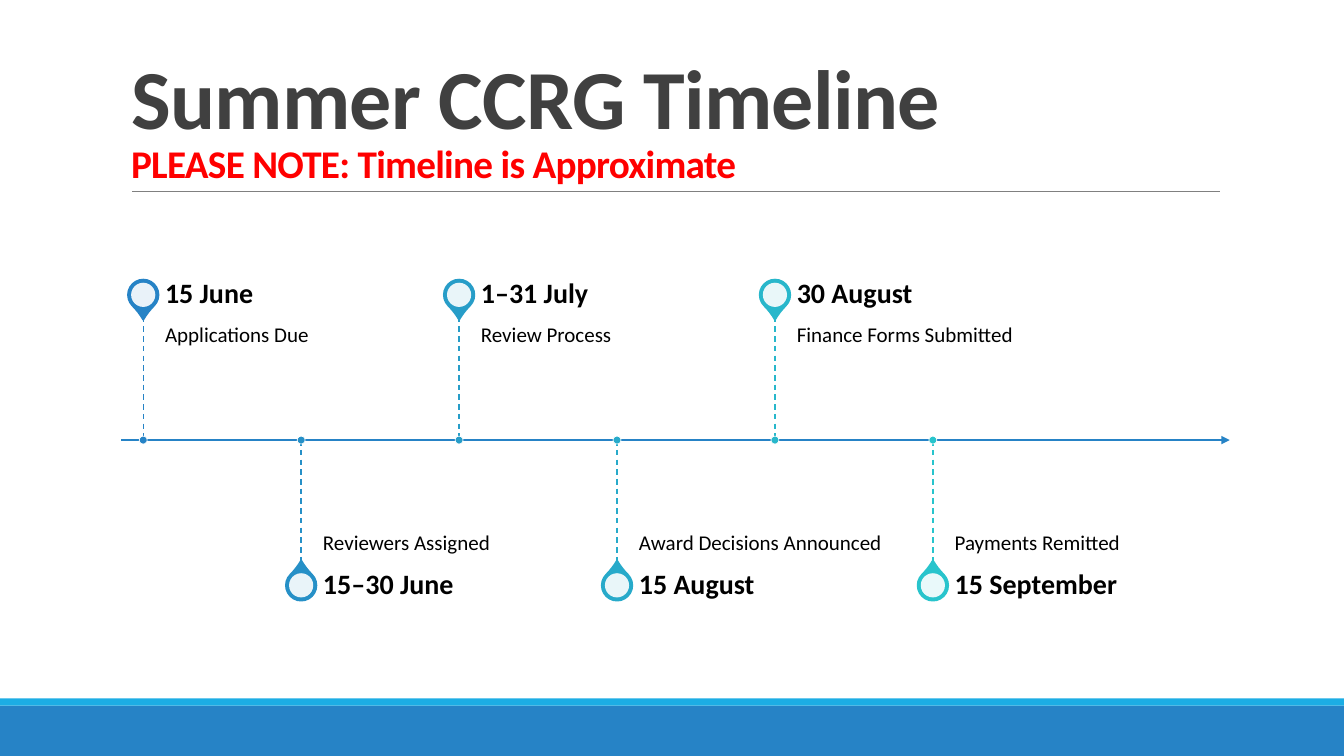
from lxml import etree
from pptx import Presentation
from pptx.dml.color import RGBColor
from pptx.enum.dml import MSO_LINE
from pptx.enum.shapes import MSO_CONNECTOR, MSO_SHAPE
from pptx.enum.text import MSO_ANCHOR, MSO_AUTO_SIZE, PP_ALIGN
from pptx.oxml.ns import qn
from pptx.util import Cm, Pt

RECT, OVAL, TEAR = MSO_SHAPE.RECTANGLE, MSO_SHAPE.OVAL, MSO_SHAPE.TEAR
TOP, MIDDLE, BOTTOM = MSO_ANCHOR.TOP, MSO_ANCHOR.MIDDLE, MSO_ANCHOR.BOTTOM
STRAIGHT, DASH, LEFT = MSO_CONNECTOR.STRAIGHT, MSO_LINE.DASH, PP_ALIGN.LEFT
NO_FIT = MSO_AUTO_SIZE.NONE

FONT = "Calibri"
BLUE = "2683C6"
SLIDE_W, SLIDE_H = 33.87, 19.05

# Milestones alternate above and below the axis
MILESTONES = [
    ("15 June", "Applications Due", "2683C6"),
    ("15–30 June", "Reviewers Assigned", "2690C7"),
    ("1–31 July", "Review Process", "279DC8"),
    ("15 August", "Award Decisions Announced", "27AACA"),
    ("30 August", "Finance Forms Submitted", "28B7CB"),
    ("15 September", "Payments Remitted", "28C4CC"),
]


def rgb(value):
    return RGBColor.from_string(value)


def add_line(s, x1, y1, x2, y2, color, weight):
    line = s.shapes.add_connector(STRAIGHT, Cm(x1), Cm(y1), Cm(x2), Cm(y2))
    line.line.color.rgb = rgb(color)
    line.line.width = Pt(weight)
    etree.SubElement(line._element.spPr, qn("a:effectLst"))
    return line


def add_filled(s, kind, x, y, w, h, fill, outline=None, weight=0):
    sp = s.shapes.add_shape(kind, Cm(x), Cm(y), Cm(w), Cm(h))
    sp.shadow.inherit = False
    sp.fill.solid()
    sp.fill.fore_color.rgb = rgb(fill)
    if outline:
        sp.line.color.rgb = rgb(outline)
        sp.line.width = Pt(weight)
    else:
        sp.line.fill.background()
    return sp


def add_disc(s, cx, cy, size, fill, outline=None, weight=0, kind=OVAL):
    return add_filled(s, kind, cx - size / 2, cy - size / 2, size, size,
                      fill, outline, weight)


def style_run(r, size, color, bold):
    r.font.name = FONT
    r.font.size = Pt(size)
    r.font.bold = bold
    r.font.color.rgb = rgb(color)


def add_label(s, text, x, y, w, h, size, bold, anchor, pad_top=0, pad_bottom=0):
    tf = s.shapes.add_textbox(Cm(x), Cm(y), Cm(w), Cm(h)).text_frame
    tf.word_wrap = True
    tf.vertical_anchor = anchor
    tf.margin_left = tf.margin_right = 0
    tf.margin_top, tf.margin_bottom = Cm(pad_top), Cm(pad_bottom)
    tf.text = text
    p = tf.paragraphs[0]
    p.line_spacing = 0.9
    style_run(p.runs[0], size, "000000", bold)


def add_footer_bands(s, y, w, h):
    stripe = 0.18
    add_filled(s, RECT, 0, y + stripe, w, h - stripe, BLUE)
    add_filled(s, RECT, 0, y, w, stripe, "1CADE4")


def add_title(s, x, y, w, h):
    title = s.shapes.title
    title.left, title.top, title.width, title.height = Cm(x), Cm(y), Cm(w), Cm(h)
    tf = title.text_frame
    tf.auto_size = NO_FIT
    tf.vertical_anchor = BOTTOM
    tf.text = "Summer CCRG Timeline\vPLEASE NOTE: Timeline is Approximate"
    p = tf.paragraphs[0]
    p.alignment = LEFT
    p.line_spacing = 0.85
    for r, size, color in zip(p.runs, (60, 28), ("404040", "FF0000")):
        style_run(r, size, color, True)
        r.font._element.set("spc", "-50")
    # Rule under the title
    add_line(s, x + 0.28, y + h, x + w - 0.25, y + h, "808080", 0.5)


def add_milestone(s, x, axis_y, side, date, event, color):
    """Place one milestone; side is -1 above the axis and 1 below it."""
    above = side < 0
    stem, pin, date_h, text_w = 3.11, 3.66, 1.09, 6.63
    text_x = x + 0.55
    pin_y = axis_y + side * pin

    # Pin with its pale centre
    drop = add_disc(s, x, pin_y, 0.77, color, color, 1.25, TEAR)
    drop.adjustments[0] = 1.15
    drop.rotation = 135 if above else 315
    centre = add_disc(s, x, pin_y, 0.61, "FFFFFF")
    srgb = centre.fill._xPr.find(qn("a:solidFill")).find(qn("a:srgbClr"))
    etree.SubElement(srgb, qn("a:alpha")).set("val", "90000")

    # Event and date
    event_y, anchor, pads = ((axis_y - stem, TOP, (0.25, 0.41)) if above
                             else (axis_y, BOTTOM, (0.41, 0.25)))
    add_label(s, event, text_x, event_y, text_w, stem, 15, False, anchor, *pads)
    add_label(s, date, text_x, pin_y - date_h / 2, text_w, date_h, 20, True, MIDDLE)

    # Stem and axis dot
    ends = sorted((axis_y, axis_y + side * stem))
    add_line(s, x, ends[0], x, ends[1], color, 1).line.dash_style = DASH
    add_disc(s, x, axis_y, 0.2, color, "FFFFFF", 0.5)


def add_timeline(s, x, y, w, h):
    axis_y = y + h / 2
    axis = add_line(s, x, axis_y, x + w, axis_y, BLUE, 1.5)
    etree.SubElement(axis.line._get_or_add_ln(), qn("a:tailEnd")).set("type", "triangle")
    first, step = 0.56, 3.98
    for i, milestone in enumerate(MILESTONES):
        side = 1 if i % 2 else -1
        add_milestone(s, x + first + i * step, axis_y, side, *milestone)


def main():
    prs = Presentation()
    prs.slide_width, prs.slide_height = Cm(SLIDE_W), Cm(SLIDE_H)
    s = prs.slides.add_slide(prs.slide_layouts[5])
    add_footer_bands(s, 17.6, SLIDE_W, SLIDE_H - 17.6)
    add_title(s, 3.05, 0.79, 27.94, 4.03)
    add_timeline(s, 3.05, 6.88, 27.94, 8.42)
    prs.save("out.pptx")


if __name__ == "__main__":
    main()
